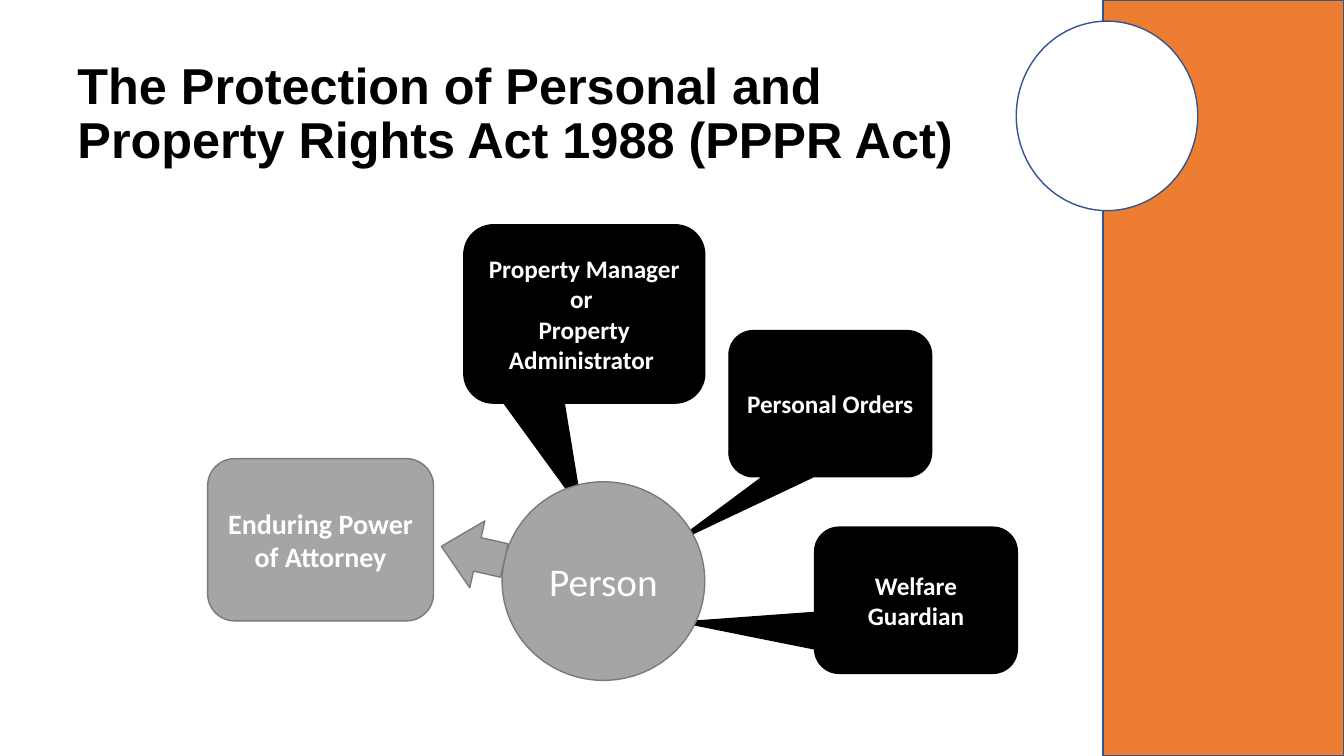
import pptx
import pptx.dml.color
import pptx.enum.shapes
import pptx.enum.text
import pptx.util
from pptx.util import Inches

SHAPES = pptx.enum.shapes.MSO_SHAPE
BLACK, WHITE, ORANGE, BLUE = "000000", "FFFFFF", "ED7D31", "325491"
GREY, DARK_GREY = "A5A5A5", "7A7A7A"


def rgb(value):
    """Turn a hex string into a colour."""
    return pptx.dml.color.RGBColor.from_string(value)


def format_text(text_frame, size, font_name, color, bold, alignment):
    """Format every run of a text frame alike and centre it vertically."""
    text_frame.word_wrap = True
    text_frame.vertical_anchor = pptx.enum.text.MSO_ANCHOR.MIDDLE
    for paragraph in text_frame.paragraphs:
        paragraph.alignment = alignment
        for run in paragraph.runs:
            run.font.size = pptx.util.Pt(size)
            run.font.name = font_name
            run.font.bold = bold
            run.font.color.rgb = rgb(color)


def add_title(slide, text):
    """Add the slide title."""
    box = slide.shapes.add_textbox(Inches(0.67), Inches(0.42), Inches(11.5), Inches(1.45))
    paragraph = box.text_frame.paragraphs[0]
    paragraph.text = text
    paragraph.line_spacing = 0.9
    format_text(box.text_frame, 36, "Arial", BLACK, True, pptx.enum.text.PP_ALIGN.LEFT)


def add_figure(slide, kind, position, fill, line, text="", size=18, bold=True):
    """Add a filled and outlined shape with optional centred text."""
    shape = slide.shapes.add_shape(kind, *map(Inches, position))
    shape.shadow.inherit = False
    shape.fill.solid()
    shape.fill.fore_color.rgb = rgb(fill)
    shape.line.color.rgb = rgb(line)
    shape.line.width = pptx.util.Pt(1)
    if text:
        shape.text_frame.text = text
        format_text(shape.text_frame, size, "Calibri", WHITE, bold, pptx.enum.text.PP_ALIGN.CENTER)
    return shape


def add_callout(slide, position, tip, text):
    """Add a black callout whose tip is given relative to its centre."""
    callout = add_figure(slide, SHAPES.ROUNDED_RECTANGULAR_CALLOUT, position, BLACK, BLACK, text)
    callout.adjustments[0], callout.adjustments[1] = tip


def add_arrow(slide, position, rotation):
    """Add the grey block arrow."""
    arrow = add_figure(slide, SHAPES.RIGHT_ARROW, position, GREY, DARK_GREY)
    arrow.adjustments[1] = 0.57
    arrow.rotation = rotation


def main():
    """Build the slide and save it."""
    presentation = pptx.Presentation()
    presentation.slide_width = Inches(13.33)
    presentation.slide_height = Inches(7.5)
    slide = presentation.slides.add_slide(presentation.slide_layouts[6])

    add_title(slide, "The Protection of Personal and \nProperty Rights Act 1988 (PPPR Act)")
    add_callout(slide, (7.23, 3.28, 2.01, 1.45), (-0.77, 0.95), "Personal Orders")
    add_callout(slide, (4.6, 2.23, 2.39, 1.77), (-0.01, 1.1),
                "Property Manager\nor \nProperty Administrator ")
    add_callout(slide, (8.08, 5.23, 2.01, 1.45), (-1.16, 0.15), "Welfare Guardian")
    add_figure(slide, SHAPES.FLOWCHART_CONNECTOR, (4.98, 4.78, 2.01, 1.97), GREY, DARK_GREY,
               "Person", 28, False)
    add_figure(slide, SHAPES.ROUNDED_RECTANGLE, (2.06, 4.55, 2.24, 1.61), GREY, DARK_GREY,
               "Enduring Power of Attorney", 20)
    add_arrow(slide, (4.37, 5.15, 0.64, 0.68), 192.7)
    add_figure(slide, SHAPES.RECTANGLE, (10.94, 0, 2.39, 7.5), ORANGE, BLUE)
    add_figure(slide, SHAPES.OVAL, (10.08, 0.21, 1.8, 1.88), WHITE, BLUE)

    presentation.save("out.pptx")


if __name__ == "__main__":
    main()
